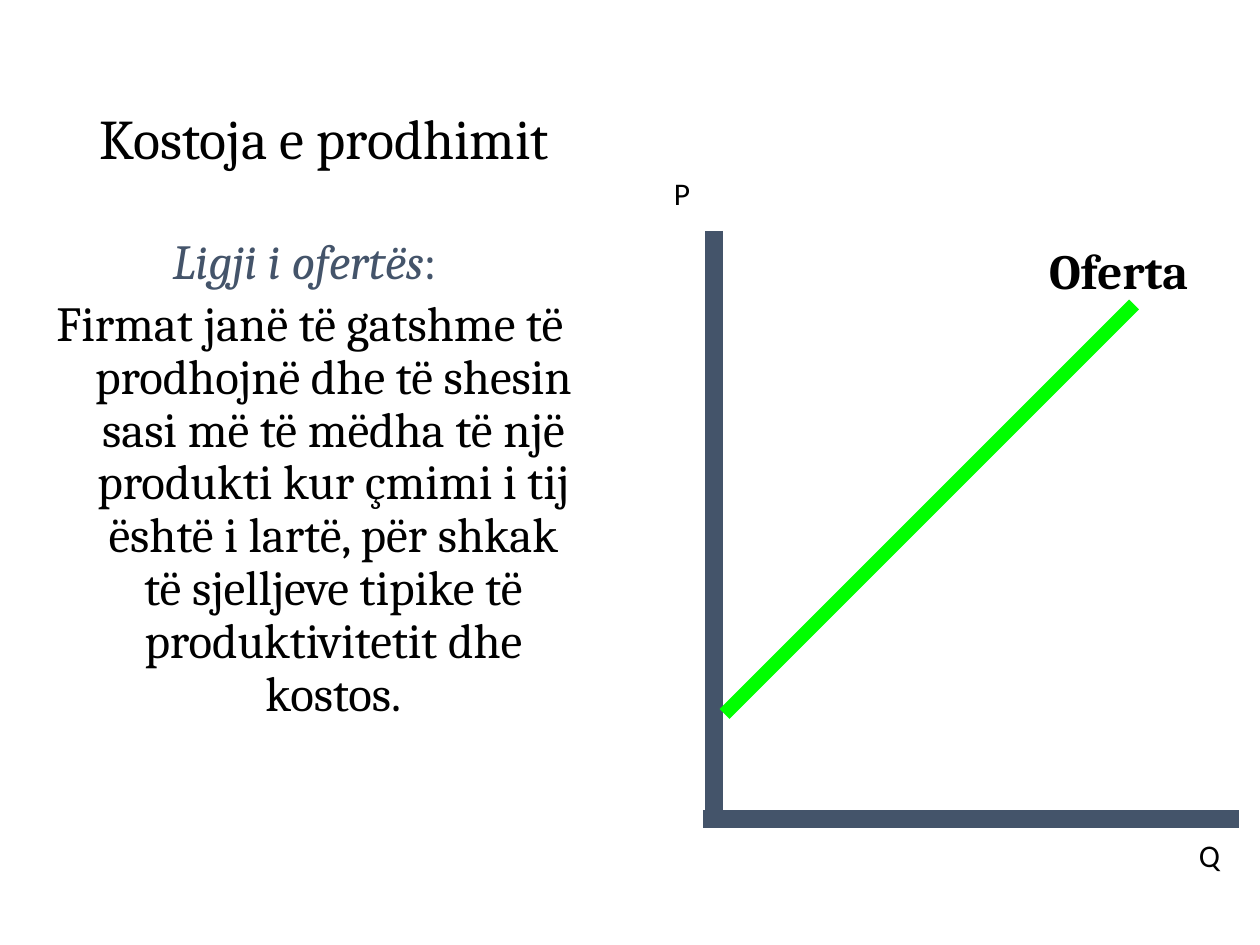
"""Build a slide on production cost with a supply line on P and Q axes."""
from dataclasses import dataclass, field

import pptx
import pptx.dml.color
import pptx.enum.shapes
import pptx.enum.text
import pptx.util
from lxml import etree

Pt = pptx.util.Pt
ALIGN = pptx.enum.text.PP_ALIGN
ANCHOR = pptx.enum.text.MSO_ANCHOR
FIT = pptx.enum.text.MSO_AUTO_SIZE
BLACK, SLATE, GREEN = "000000", "44546A", "00FF00"
SERIF = {"name": "Cambria", "size": Pt(28)}
SANS = {"name": "Calibri", "size": Pt(18)}


@dataclass
class Line:
    start: tuple[float, float]
    end: tuple[float, float]
    hue: str
    width: float


@dataclass
class Label:
    text: str
    box: tuple[float, float, float, float]
    font: dict
    frame: dict = field(default_factory=lambda: {"word_wrap": True})


LINES = [
    Line((408, 132), (408, 468), SLATE, 10),
    Line((402, 468), (708, 468), SLATE, 10),
    Line((414, 408), (648, 174), GREEN, 8),
]
LABELS = [
    Label("Oferta", (592.5, 134, 97, 40), {**SERIF, "bold": True}, {"word_wrap": False}),
    Label("P", (378, 96, 42, 36), SANS),
    Label("Q", (678, 474, 42, 36), SANS),
]
BODY = [
    [("Ligji i ofertës", SLATE, True), (": ", SLATE, False)],
    [("Firmat janë të gatshme të prodhojnë dhe të shesin sasi më të mëdha "
      "të një produkti kur çmimi i tij është i lartë, për shkak të sjelljeve "
      "tipike të produktivitetit dhe kostos.", BLACK, False)],
]


def style(item, values: dict) -> None:
    for key, value in values.items():
        setattr(item, key, value)


def tint(fmt, hue: str) -> None:
    fmt.rgb = pptx.dml.color.RGBColor.from_string(hue)


def place(shape, box: tuple) -> None:
    style(shape, dict(zip(("left", "top", "width", "height"), map(Pt, box))))


def write(para, text: str, hue: str, font: dict) -> None:
    run = para.add_run()
    run.text = text
    style(run.font, font)
    tint(run.font.color, hue)


def draw_title(slide) -> None:
    title = slide.shapes.title
    place(title, (49.5, 29, 621, 104))
    style(title.text_frame, {"vertical_anchor": ANCHOR.MIDDLE, "auto_size": FIT.NONE})
    para = title.text_frame.paragraphs[0]
    style(para, {"alignment": ALIGN.LEFT, "line_spacing": 0.9})
    write(para, "Kostoja e prodhimit", BLACK, {**SERIF, "size": Pt(32)})


def draw_body(slide) -> None:
    frame = slide.shapes.add_textbox(Pt(18), Pt(132), Pt(318), Pt(366)).text_frame
    frame.word_wrap = True
    for row, parts in enumerate(BODY):
        para = frame.add_paragraph() if row else frame.paragraphs[0]
        style(para, {"alignment": ALIGN.CENTER, "line_spacing": 0.9,
                     "space_before": Pt(5 * row)})
        props = para._p.get_or_add_pPr()
        props.set("marL", str(Pt(27)))
        props.set("indent", str(Pt(-27)))
        for text, hue, slant in parts:
            write(para, text, hue, {**SERIF, "italic": slant})


def draw_line(slide, line: Line) -> None:
    kind = pptx.enum.shapes.MSO_CONNECTOR.STRAIGHT
    shape = slide.shapes.add_connector(kind, *map(Pt, line.start + line.end))
    shape.line.width = Pt(line.width)
    tint(shape.line.color, line.hue)
    etree.SubElement(shape._element.spPr, pptx.oxml.ns.qn("a:effectLst"))


def draw_label(slide, label: Label) -> None:
    frame = slide.shapes.add_textbox(*map(Pt, label.box)).text_frame
    style(frame, label.frame)
    write(frame.paragraphs[0], label.text, BLACK, label.font)


def main() -> None:
    deck = pptx.Presentation()
    style(deck, {"slide_width": Pt(720), "slide_height": Pt(540)})
    slide = deck.slides.add_slide(deck.slide_layouts.get_by_name("Title Only"))
    draw_title(slide)
    draw_body(slide)
    for line in LINES:
        draw_line(slide, line)
    for label in LABELS:
        draw_label(slide, label)
    deck.save("out.pptx")


if __name__ == "__main__":
    main()
